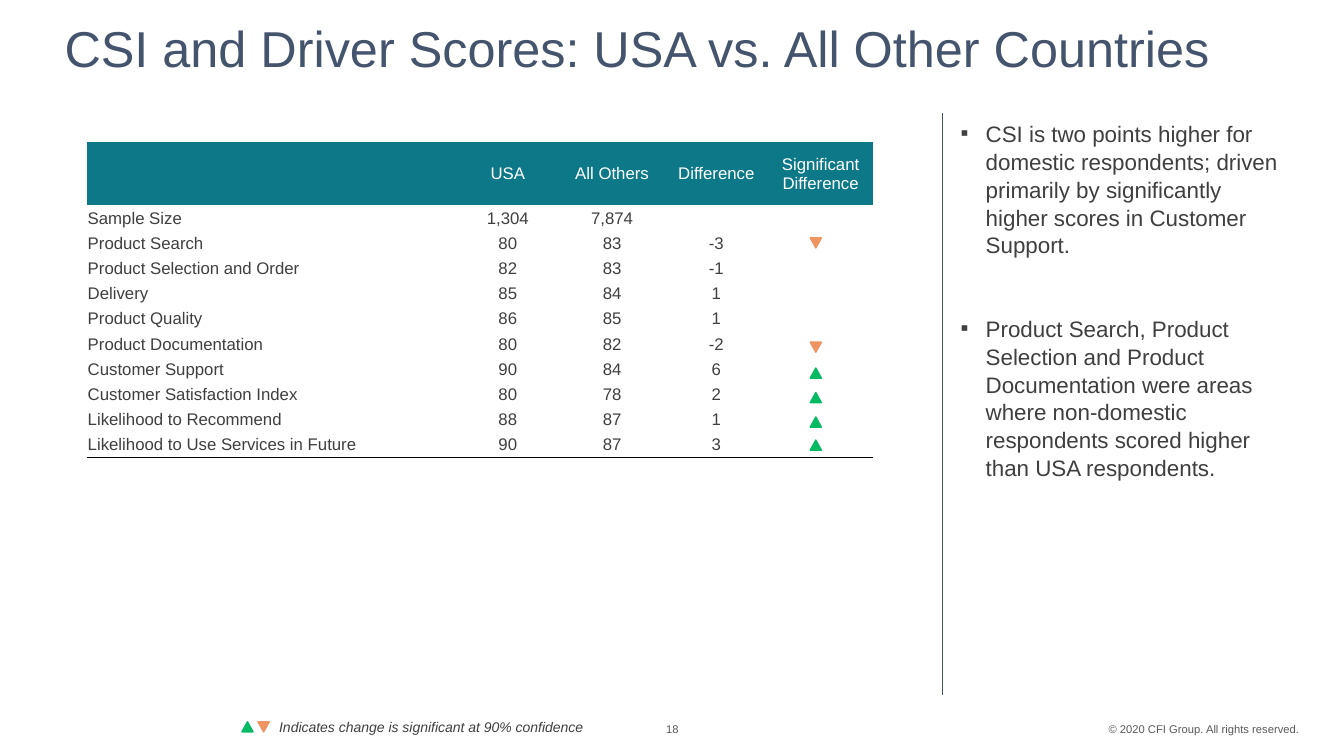
from lxml import etree
from pptx import Presentation
from pptx import util as u
from pptx.dml.color import RGBColor
from pptx.enum import shapes, text
from pptx.oxml import ns

Pt = u.Pt
FONT = "Arial"
COLORS = {
    "navy": "45546D", "teal": "0D7988", "body": "3F3F3F", "footer": "595959",
    "white": "FFFFFF", "black": "000000", "up": "06BA63", "down": "EF9562",
}
LEFT, CENTER, RIGHT = text.PP_ALIGN.LEFT, text.PP_ALIGN.CENTER, text.PP_ALIGN.RIGHT
MARK_W, MARK_H = 8, 7.2

HEADINGS = ["", "USA", "All Others", "Difference", "Significant Difference"]
# Label, USA, all others, difference, significance mark, drop of the mark below mid-row
SCORES = [
    ("Sample Size", "1,304", "7,874", "", None, 0),
    ("Product Search", "80", "83", "-3", "down", 0),
    ("Product Selection and Order", "82", "83", "-1", None, 0),
    ("Delivery", "85", "84", "1", None, 0),
    ("Product Quality", "86", "85", "1", None, 0),
    ("Product Documentation", "80", "82", "-2", "down", 2.5),
    ("Customer Support", "90", "84", "6", "up", 3),
    ("Customer Satisfaction Index", "80", "78", "2", "up", 2.5),
    ("Likelihood to Recommend", "88", "87", "1", "up", 2),
    ("Likelihood to Use Services in Future", "90", "87", "3", "up", 0.5),
]
FINDINGS = [
    "CSI is two points higher for domestic respondents; driven primarily by "
    "significantly higher scores in Customer Support.",
    "Product Search, Product Selection and Product Documentation were areas "
    "where non-domestic respondents scored higher than USA respondents.",
]


def rgb(name):
    return RGBColor.from_string(COLORS[name])


def add_element(parent, tag, **attributes):
    return etree.SubElement(parent, ns.qn(tag), **attributes)


def add_run(paragraph, words, size, color, italic=False):
    run = paragraph.add_run()
    run.text = words
    run.font.name, run.font.size = FONT, Pt(size)
    run.font.color.rgb = rgb(color)
    if italic:
        run.font.italic = True


def add_frame(slide, left, top, width, height):
    frame = slide.shapes.add_textbox(Pt(left), Pt(top), Pt(width), Pt(height)).text_frame
    frame.word_wrap = True
    return frame


def add_label(slide, box, words, size, color, align=LEFT, italic=False):
    frame = add_frame(slide, *box)
    frame.paragraphs[0].alignment = align
    add_run(frame.paragraphs[0], words, size, color, italic)
    return frame


def add_mark(slide, left, top, direction):
    mark = slide.shapes.add_shape(shapes.MSO_SHAPE.ISOSCELES_TRIANGLE,
                                  Pt(left), Pt(top), Pt(MARK_W), Pt(MARK_H))
    mark.shadow.inherit = False
    mark.fill.solid()
    mark.fill.fore_color.rgb = mark.line.color.rgb = rgb(direction)
    mark.line.width = Pt(1)
    mark.rotation = 180 if direction == "down" else 0


def add_title(slide, left, top, width, height):
    title = add_label(slide, (left, top, width, height),
                      "CSI and Driver Scores: USA vs. All Other Countries", 36, "navy")
    title.vertical_anchor = text.MSO_ANCHOR.MIDDLE
    title.paragraphs[0].line_spacing = 0.9


def add_scores(slide, left, top, label_w, score_w, header_h, row_h):
    rows = [HEADINGS] + [(*score[:4], "") for score in SCORES]
    width = label_w + 4 * score_w
    frame = slide.shapes.add_table(len(rows), 5, Pt(left), Pt(top), Pt(width),
                                   Pt(header_h + row_h * len(SCORES)))
    table = frame.table
    table.first_row = table.horz_banding = False
    # Plain table style without grid
    style = next(frame.element.iter(ns.qn("a:tableStyleId")))
    style.text = "{2D5ABB26-0587-4C30-8999-92F81FD0307C}"
    for i, column in enumerate(table.columns):
        column.width = Pt(score_w if i else label_w)
    for r, row in enumerate(rows):
        table.rows[r].height = Pt(row_h if r else header_h)
        for c, words in enumerate(row):
            cell = table.cell(r, c)
            cell.margin_left = cell.margin_right = cell.margin_top = Pt(0.7)
            cell.margin_bottom = 0
            cell.vertical_anchor = text.MSO_ANCHOR.MIDDLE
            if r:
                cell.fill.background()
            else:
                cell.fill.solid()
                cell.fill.fore_color.rgb = rgb("teal")
            paragraph = cell.text_frame.paragraphs[0]
            paragraph.alignment = CENTER if c else LEFT
            if words:
                add_run(paragraph, words, 12, "body" if r else "white")
            else:
                add_element(paragraph._p, "a:endParaRPr", sz="1200")

    # Rule under the last row
    for tc in list(frame.element.iter(ns.qn("a:tc")))[-5:]:
        rule = etree.Element(ns.qn("a:lnB"), w=str(Pt(0.5)))
        add_element(add_element(rule, "a:solidFill"), "a:srgbClr", val=COLORS["black"])
        tc.find(ns.qn("a:tcPr")).insert(0, rule)

    # Significance marks
    mark_left = left + width - score_w / 2 - MARK_W / 2 - 3.5
    for i, (*_, direction, drop) in enumerate(SCORES):
        if direction:
            middle = top + header_h + row_h * (i + 0.5)
            add_mark(slide, mark_left, middle - MARK_H / 2 + drop, direction)


def add_findings(slide, left, top, width, height):
    # Divider on the left
    divider = slide.shapes.add_connector(shapes.MSO_CONNECTOR.STRAIGHT, Pt(left - 6),
                                         Pt(top - 0.5), Pt(left - 6), Pt(top + height))
    divider.line.color.rgb = rgb("navy")
    divider.line.width = Pt(0.5)
    add_element(divider.element.spPr, "a:effectLst")

    frame = add_frame(slide, left, top, width, height)
    for i, finding in enumerate(FINDINGS):
        paragraph = frame.add_paragraph() if i else frame.paragraphs[0]
        properties = paragraph._p.get_or_add_pPr()
        properties.set("marL", str(Pt(18)))
        properties.set("indent", str(-Pt(18)))
        add_element(add_element(properties, "a:buClr"), "a:srgbClr", val=COLORS["body"])
        add_element(properties, "a:buFont", typeface=FONT)
        add_element(properties, "a:buChar", char="▪")
        paragraph.line_spacing = 1.04
        if i:
            paragraph.space_before = Pt(39.5)
        add_run(paragraph, finding, 16, "body")


def add_footer(slide, left, top, width, height):
    # Legend
    for offset, direction in ((0, "up"), (11.5, "down")):
        add_mark(slide, left + offset, top + 5.8, direction)
    add_label(slide, (left + 19.5, top, 270, height),
              "Indicates change is significant at 90% confidence", 10, "body", italic=True)
    # Page number and copyright
    add_label(slide, (left + 279.5, top + 2.8, 56, 17), "18", 8, "footer", CENTER)
    add_label(slide, (left + width - 219, top + 2.8, 219, 17),
              "© 2020 CFI Group. All rights reserved.", 8, "footer", RIGHT)


def main():
    deck = Presentation()
    deck.slide_width, deck.slide_height = Pt(960), Pt(540)
    slide = deck.slides.add_slide(deck.slide_layouts[6])
    add_title(slide, 39, 0, 888, 72.5)
    add_scores(slide, 62, 101.5, 263.5, 74.5, 45, 18)
    add_findings(slide, 679, 81.3, 248, 415)
    add_footer(slide, 172.8, 509.8, 762.5, 19.5)
    deck.save("out.pptx")


if __name__ == "__main__":
    main()
